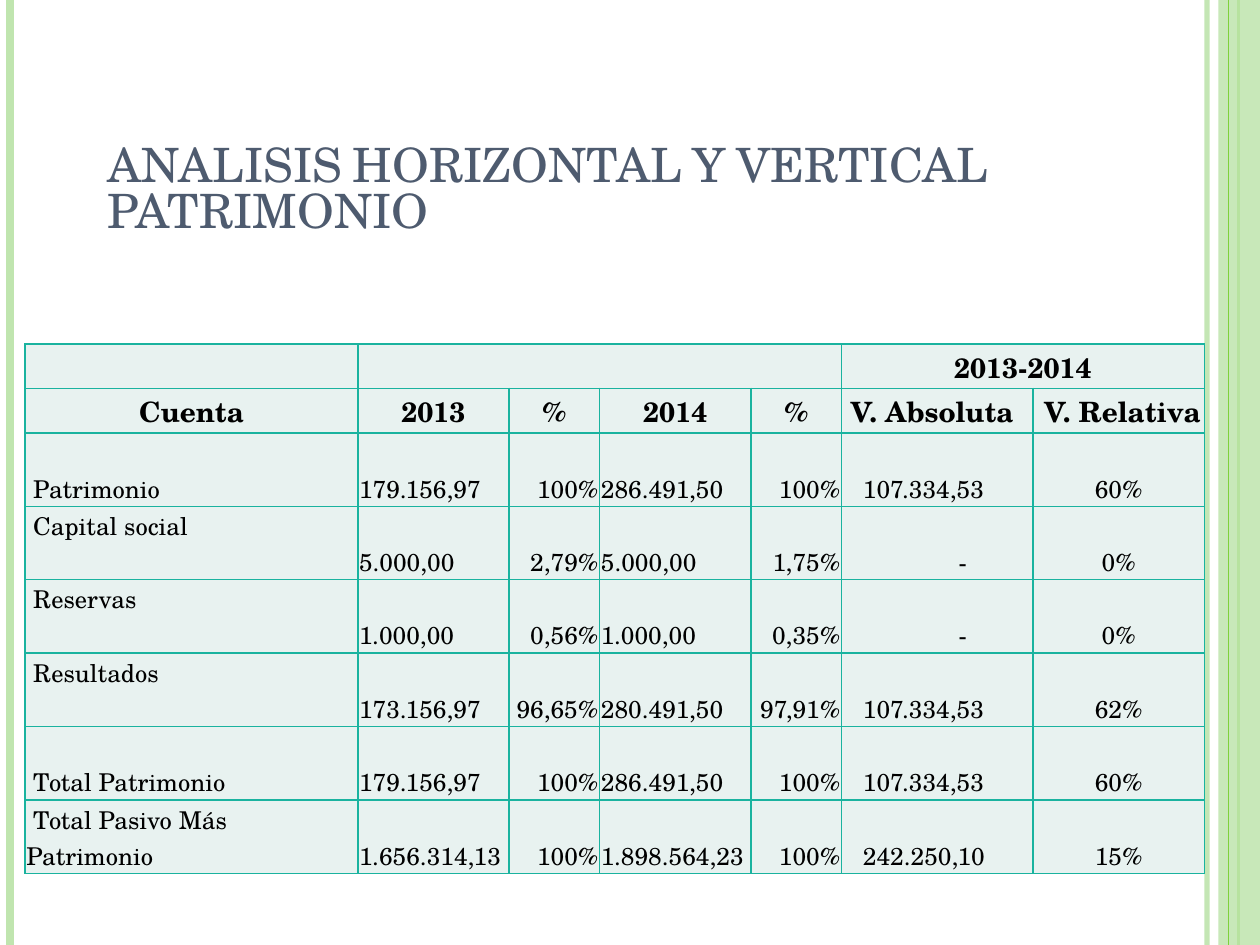
from dataclasses import dataclass

from lxml import etree
from pptx import Presentation
from pptx.dml.color import RGBColor
from pptx.enum.shapes import MSO_CONNECTOR, MSO_SHAPE
from pptx.enum.text import MSO_ANCHOR, MSO_AUTO_SIZE, PP_ALIGN
from pptx.oxml.ns import qn
from pptx.util import Inches, Pt

LEFT, CENTER, RIGHT = PP_ALIGN.LEFT, PP_ALIGN.CENTER, PP_ALIGN.RIGHT
TOP, BOTTOM = MSO_ANCHOR.TOP, MSO_ANCHOR.BOTTOM
STRAIGHT, RECT = MSO_CONNECTOR.STRAIGHT, MSO_SHAPE.RECTANGLE


@dataclass(frozen=True)
class Theme:
    font: str = "TeX Gyre Schola"
    title: str = "4E5B6F"
    text: str = "000000"
    pale: str = "C0E5AF"
    green: str = "7FD13B"
    cell: str = "E8F2F0"
    border: str = "1AB39F"
    title_size: float = 27
    head_size: float = 16
    body_size: float = 14


def grid(n):
    """Length of n grid units; the slide is 100 columns by 75 rows."""
    return Inches(n / 10)


def set_alpha(fill_parent, percent):
    color = next(fill_parent.iter(qn("a:srgbClr")))
    etree.SubElement(color, qn("a:alpha")).set("val", str(percent * 1000))


class SlideBuilder:
    def __init__(self, prs, theme):
        self.theme = theme
        self.s = prs.slides.add_slide(prs.slide_layouts[5])

    def run(self, p, text, size, color, bold=False):
        r = p.add_run()
        r.text = text
        r.font.name, r.font.size, r.font.bold = self.theme.font, Pt(size), bold
        r.font.color.rgb = RGBColor.from_string(color)
        return r

    def title(self, text, box):
        sp = self.s.shapes.title
        sp.left, sp.top, sp.width, sp.height = map(grid, box)
        tf = sp.text_frame
        tf.word_wrap, tf.auto_size = True, MSO_AUTO_SIZE.NONE
        tf.vertical_anchor = BOTTOM
        p = tf.paragraphs[0]
        p.alignment, p.line_spacing = LEFT, 0.82
        r = self.run(p, text, self.theme.title_size, self.theme.title)
        r.font._element.set("cap", "small")

    def rule(self, x, color, width, alpha=None):
        """Vertical line over the full height of the slide."""
        c = self.s.shapes.add_connector(STRAIGHT, grid(x), 0, grid(x), grid(75))
        c.line.color.rgb = RGBColor.from_string(color)
        c.line.width = Pt(width)
        if alpha:
            set_alpha(c.line._ln, alpha)
        etree.SubElement(c._element.spPr, qn("a:effectLst"))

    def band(self, box, color, alpha):
        sp = self.s.shapes.add_shape(RECT, *map(grid, box))
        sp.shadow.inherit = False
        sp.fill.solid()
        sp.fill.fore_color.rgb = RGBColor.from_string(color)
        set_alpha(sp._element.spPr, alpha)
        sp.line.fill.background()

    def table(self, left, top, cols, rows):
        frame = self.s.shapes.add_table(len(rows), len(cols), grid(left), grid(top),
                                        grid(sum(cols)), grid(sum(rows)))
        tbl = frame.table
        tbl.first_row = tbl.horz_banding = False
        for column, width in zip(tbl.columns, cols):
            column.width = grid(width)
        for row, height in zip(tbl.rows, rows):
            row.height = grid(height)
            for cell in row.cells:
                self.style_cell(cell)
        return tbl

    def style_cell(self, cell):
        cell.margin_left = cell.margin_right = cell.margin_top = grid(0.1)
        cell.margin_bottom = 0
        tcPr = cell._tc.get_or_add_tcPr()
        for side in ("lnL", "lnR", "lnT", "lnB"):
            ln = etree.SubElement(tcPr, qn(f"a:{side}"), w=str(Pt(1)))
            fill = etree.SubElement(ln, qn("a:solidFill"))
            etree.SubElement(fill, qn("a:srgbClr"), val=self.theme.border)
        cell.fill.solid()
        cell.fill.fore_color.rgb = RGBColor.from_string(self.theme.cell)

    def cell_text(self, cell, text, size, align, anchor=BOTTOM, bold=False, indent=0.1):
        cell.vertical_anchor, cell.margin_left = anchor, grid(indent)
        p = cell.text_frame.paragraphs[0]
        p.alignment = align
        self.run(p, text, size, self.theme.text, bold)


HEADERS = ["Cuenta", "2013", "%", "2014", "%", " V. Absoluta", " V. Relativa"]
ACCOUNTS = [
    (" Patrimonio", "179.156,97", "100%", "286.491,50", "100%", "107.334,53", "60%"),
    (" Capital social", "5.000,00", "2,79%", "5.000,00", "1,75%", "-", "0%"),
    (" Reservas", "1.000,00", "0,56%", "1.000,00", "0,35%", "-", "0%"),
    (" Resultados", "173.156,97", "96,65%", "280.491,50", "97,91%", "107.334,53", "62%"),
    (" Total Patrimonio", "179.156,97", "100%", "286.491,50", "100%", "107.334,53", "60%"),
    (" Total Pasivo Más Patrimonio", "1.656.314,13", "100%", "1.898.564,23", "100%",
     "242.250,10", "15%"),
]
TOP_LABELS = {" Capital social", " Reservas", " Resultados"}
ALIGNS = [LEFT, LEFT, RIGHT, LEFT, RIGHT, LEFT, CENTER]
ABSOLUTE = 5


def main():
    prs = Presentation()
    prs.slide_width, prs.slide_height = grid(100), grid(75)
    theme = Theme()
    b = SlideBuilder(prs, theme)

    # Side decoration
    b.rule(95.8, theme.pale, 3, alpha=93)
    b.rule(0.8, theme.pale, 4.5)
    b.rule(98.3, theme.green, 1.5)
    b.band((96.7, 0, 3.3, 75), theme.pale, alpha=87)
    b.rule(97.5, theme.green, 0.75)

    b.title("ANALISIS HORIZONTAL Y VERTICAL PATRIMONIO", (7.5, 10.7, 81.7, 8.7))

    # Table with its two header rows
    tbl = b.table(2, 27.3, [26.4, 12, 7.2, 12, 7.2, 15.2, 13.6],
                  [3.53] * 2 + [5.83] * len(ACCOUNTS))
    tbl.cell(0, 1).merge(tbl.cell(0, 4))
    tbl.cell(0, ABSOLUTE).merge(tbl.cell(0, 6))
    b.cell_text(tbl.cell(0, ABSOLUTE), "2013-2014", theme.head_size, CENTER, bold=True)
    for col, text in enumerate(HEADERS):
        b.cell_text(tbl.cell(1, col), text, theme.head_size,
                    LEFT if col == ABSOLUTE else CENTER, bold=True)

    # Accounts
    for row, account in enumerate(ACCOUNTS, start=2):
        for col, (text, align) in enumerate(zip(account, ALIGNS)):
            indent = 0.1
            if col == ABSOLUTE:
                indent = 9.3 if text == "-" else 1.7
            b.cell_text(tbl.cell(row, col), text, theme.body_size, align,
                        TOP if text in TOP_LABELS else BOTTOM, indent=indent)

    prs.save("out.pptx")


if __name__ == "__main__":
    main()
